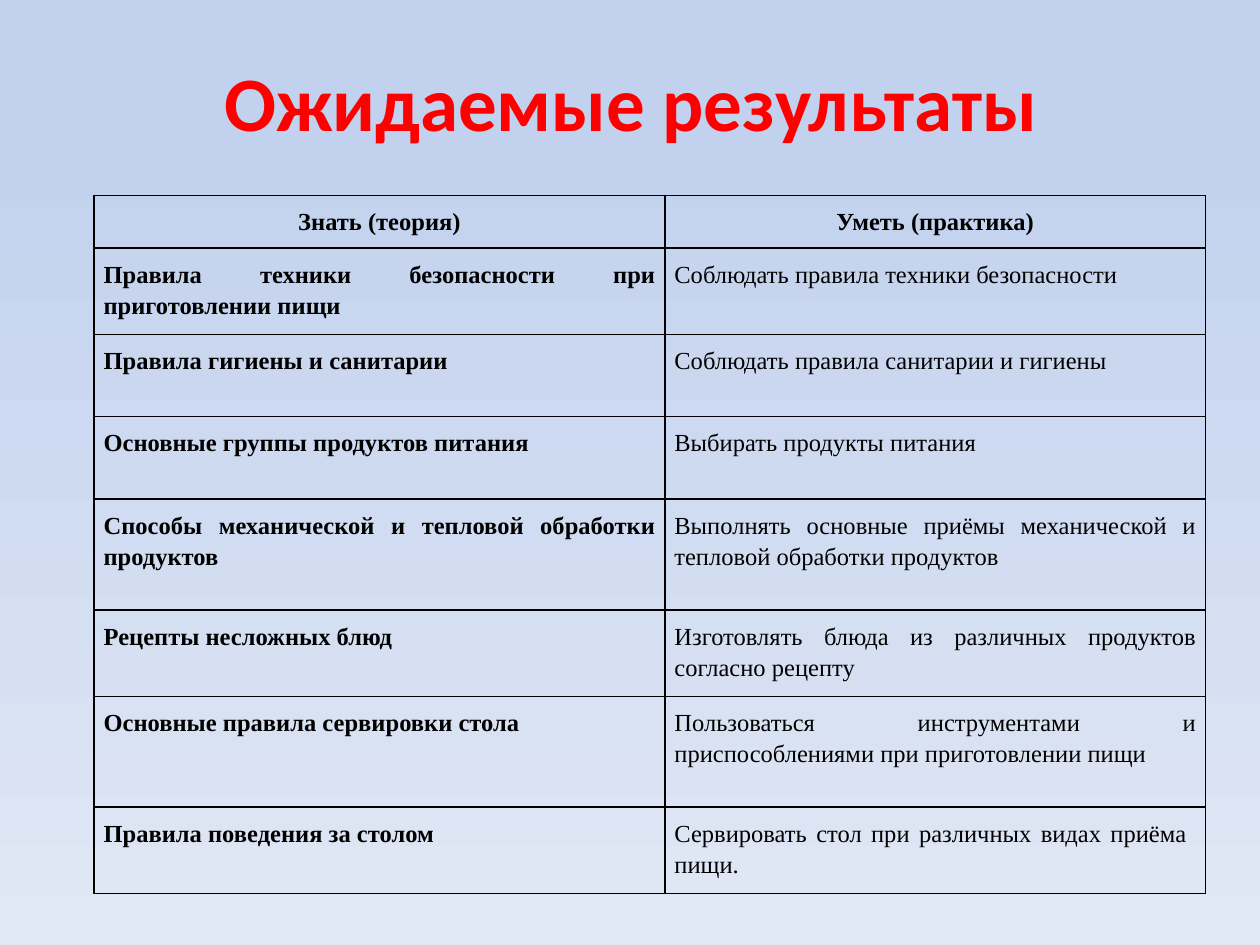
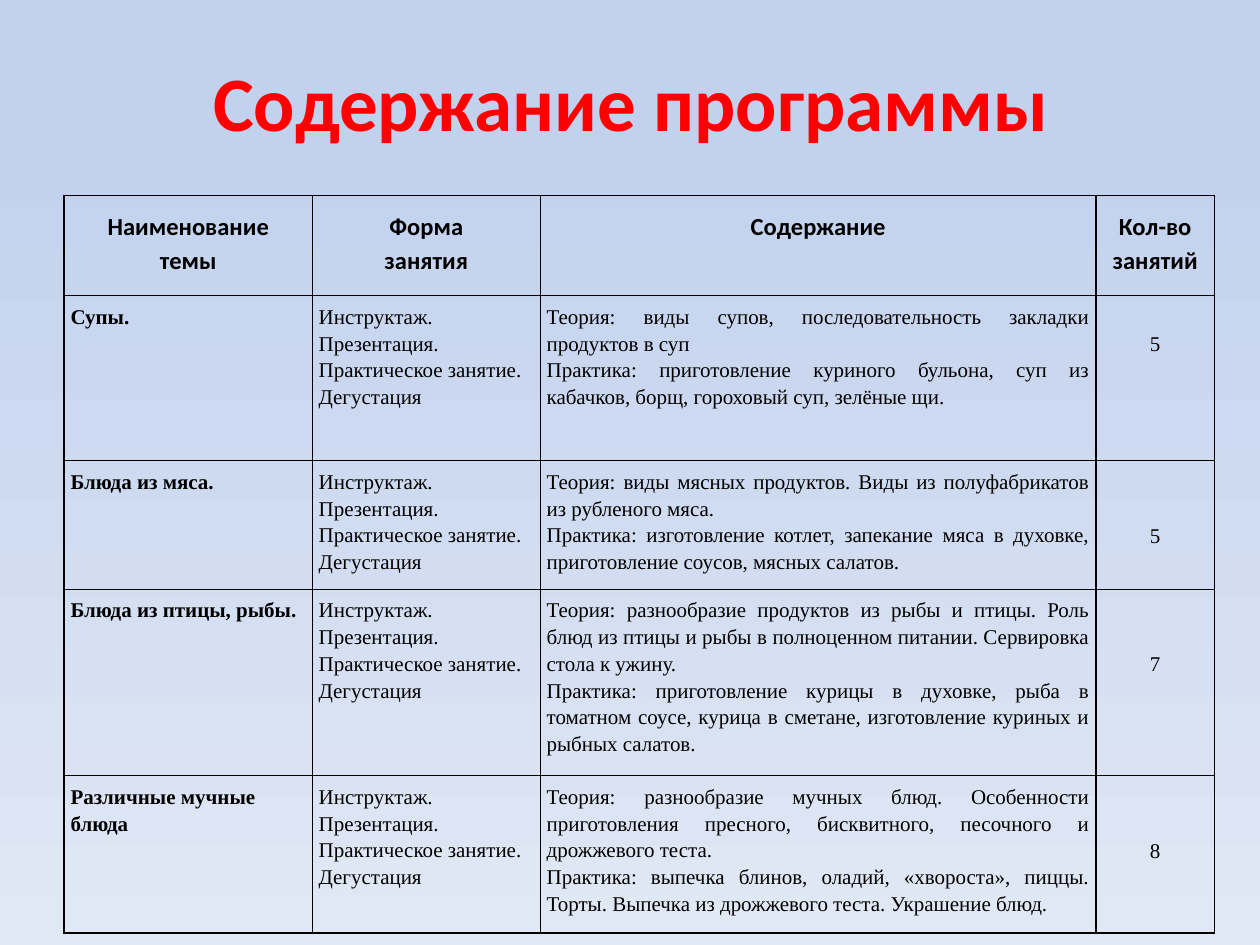
"""Build two slides on a cooking course: expected results and programme."""
import lxml.etree
import pptx
import pptx.dml.color
import pptx.enum.text
import pptx.oxml.ns
import pptx.util

Pt = pptx.util.Pt
ALIGN = pptx.enum.text.PP_ALIGN
LEFT, MID, FULL = ALIGN.LEFT, ALIGN.CENTER, ALIGN.JUSTIFY
HUES = {"title": "FF0000", "ink": "000000", "top": "C2D1ED", "base": "E1E8F5"}
SANS, SERIF = "Calibri", "Times New Roman"
LINE = 15.4

GOALS = [
    ("Знать (теория)", "Уметь (практика)"),
    ("Правила техники безопасности при приготовлении пищи",
     "Соблюдать правила техники безопасности"),
    ("Правила гигиены и санитарии", "Соблюдать правила санитарии и гигиены"),
    ("Основные группы продуктов питания", "Выбирать продукты питания"),
    ("Способы механической и тепловой обработки продуктов",
     "Выполнять основные приёмы механической и тепловой обработки продуктов"),
    ("Рецепты несложных блюд",
     "Изготовлять блюда из различных продуктов согласно рецепту"),
    ("Основные правила сервировки стола",
     "Пользоваться инструментами и приспособлениями при приготовлении пищи"),
    ("Правила поведения за столом",
     "Сервировать стол при различных видах приёма  пищи."),
]
HEADS = ["Наименование темы", "Форма\nзанятия", "Содержание", "Кол-во занятий"]
FORM = "Инструктаж. Презентация. Практическое занятие. Дегустация"
TOPICS = [
    ("Супы.", FORM,
     "Теория: виды супов, последовательность закладки продуктов в суп\n"
     "Практика: приготовление куриного бульона, суп из кабачков, борщ, "
     "гороховый суп, зелёные щи.", "5"),
    ("Блюда из мяса.", FORM,
     "Теория: виды мясных продуктов. Виды из полуфабрикатов из рубленого мяса.\n"
     "Практика: изготовление котлет, запекание мяса в духовке, "
     "приготовление соусов, мясных салатов.", "5"),
    ("Блюда из птицы, рыбы.", FORM,
     "Теория: разнообразие продуктов из рыбы и птицы. Роль блюд из птицы и рыбы "
     "в полноценном питании. Сервировка стола к ужину.\n"
     "Практика: приготовление курицы в духовке, рыба в томатном соусе, "
     "курица в сметане, изготовление куриных и рыбных салатов.", "7"),
    ("Различные мучные блюда", FORM,
     "Теория: разнообразие мучных блюд. Особенности приготовления пресного, "
     "бисквитного, песочного и дрожжевого теста.\n"
     "Практика: выпечка блинов, оладий, «хвороста», пиццы. Торты. "
     "Выпечка из дрожжевого теста. Украшение блюд.", "8"),
]


def tint(name):
    """Return the named colour."""
    return pptx.dml.color.RGBColor.from_string(HUES[name])


def write(frame, text, font, size, hue, bold, align, gap=1.0):
    """Put text in a frame and format every paragraph."""
    frame.text = text
    for para in frame.paragraphs:
        para.alignment = align
        para.line_spacing = gap
        for run in para.runs:
            run.font.name, run.font.size, run.font.bold = font, Pt(size), bold
            run.font.color.rgb = tint(hue)


def start(deck, title):
    """Add a slide with the shared background and title."""
    slide = deck.slides.add_slide(deck.slide_layouts[6])
    fill = slide.background.fill
    fill.gradient()
    fill.gradient_angle = 270
    for stop, hue, place in zip(fill.gradient_stops, ("top", "base"), (0.16, 1)):
        stop.color.rgb = tint(hue)
        stop.position = place
    frame = slide.shapes.add_textbox(Pt(36.7), Pt(20), Pt(648), Pt(75)).text_frame
    frame.word_wrap = True
    frame.vertical_anchor = pptx.enum.text.MSO_ANCHOR.MIDDLE
    write(frame, title, SANS, 44, "title", True, MID)
    return slide


def edge(cell, sides):
    """Draw the given sides of a cell and clear the others."""
    name = pptx.oxml.ns.qn
    props = cell._tc.get_or_add_tcPr()
    for side in "LRTB":
        line = lxml.etree.SubElement(props, name("a:ln" + side), w=str(Pt(1)))
        if side in sides:
            fill = lxml.etree.SubElement(line, name("a:solidFill"))
            lxml.etree.SubElement(fill, name("a:srgbClr"), val=HUES["ink"])
        else:
            lxml.etree.SubElement(line, name("a:noFill"))


def grid(slide, left, top, wides, highs, inset, sides="LRTB"):
    """Add an unfilled ruled table."""
    table = slide.shapes.add_table(len(highs), len(wides), Pt(left), Pt(top),
                                   Pt(sum(wides)), Pt(sum(highs))).table
    table.first_row = table.horz_banding = False
    for col, wide in zip(table.columns, wides):
        col.width = Pt(wide)
    for row, high in zip(table.rows, highs):
        row.height = Pt(high)
    for cell in table.iter_cells():
        edge(cell, sides)
        cell.fill.background()
        cell.margin_left = cell.margin_right = Pt(inset)
        cell.margin_top = cell.margin_bottom = Pt(inset)
    return table


def enter(cell, text, font, size, bold, align):
    """Write text in a table cell."""
    write(cell.text_frame, text, font, size, "ink", bold, align, 1.15)


def goals(deck):
    """Build the slide of expected results."""
    slide = start(deck, "Ожидаемые результаты")
    highs = [30, 47, 47, 47, 63.4, 47, 63.4, 47]
    table = grid(slide, 53.8, 111.6, [326.2, 308.9], highs, 5.4)
    for r, texts in enumerate(GOALS):
        for c, text in enumerate(texts):
            enter(table.cell(r, c), text, SERIF, 14, r == 0 or c == 0,
                  FULL if r else MID)


def plan(deck):
    """Build the slide of the programme."""
    slide = start(deck, "Содержание программы")
    wides = [141.8, 130.3, 317.5, 67.7]
    head = grid(slide, 36.7, 111.6, wides, [64.8], 7.2, "LRT")
    for cell, text in zip(head.iter_cells(), HEADS):
        enter(cell, text, SANS, 14, True, MID)
    body = grid(slide, 36.7, 169, wides, [94.3, 69, 99.4, 84.5], 3.6)
    for r, texts in enumerate(TOPICS):
        for c, (text, align) in enumerate(zip(texts, (LEFT, LEFT, FULL, MID))):
            enter(body.cell(r, c), text, SERIF, 12, c == 0, align)
        body.cell(r, 3).margin_top = Pt(3.6 + LINE * (2 if r else 1))


def main():
    """Build and save the deck."""
    deck = pptx.Presentation()
    deck.slide_width, deck.slide_height = Pt(720), Pt(540)
    goals(deck)
    plan(deck)
    deck.save("out.pptx")


if __name__ == "__main__":
    main()
